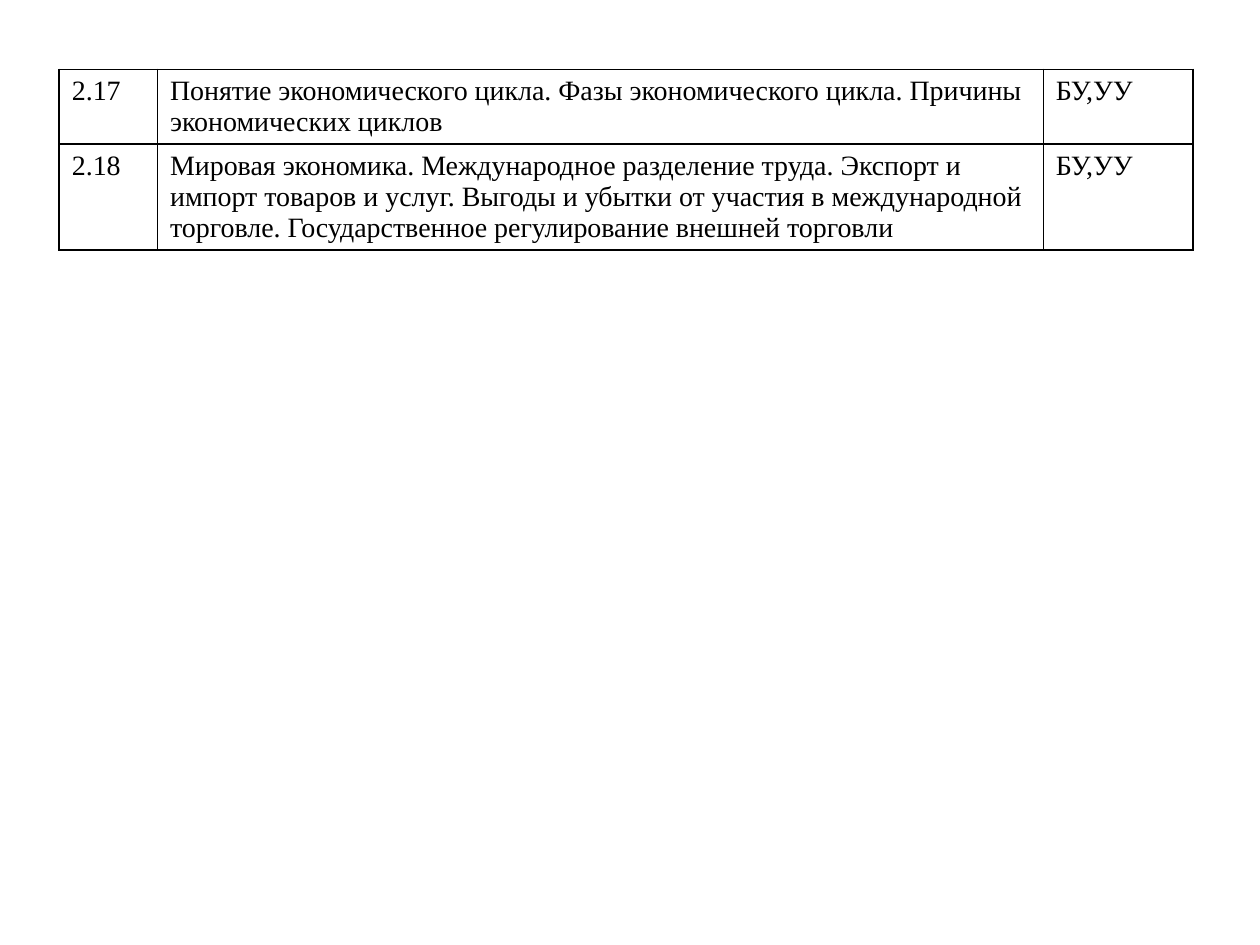
import pptx
import pptx.dml.color
import pptx.oxml
import pptx.oxml.ns
import pptx.util
from pptx.util import Inches

BLACK = pptx.dml.color.RGBColor(0x00, 0x00, 0x00)
WHITE = pptx.dml.color.RGBColor(0xFF, 0xFF, 0xFF)

COLUMN_WIDTHS = [0.78, 7.03, 1.19]
ROW_HEIGHT = 0.41
TOPICS = [
    ("2.17",
     "Понятие экономического цикла. Фазы экономического цикла. "
     "Причины экономических циклов",
     "БУ,УУ"),
    ("2.18",
     "Мировая экономика. Международное разделение труда. Экспорт и импорт "
     "товаров и услуг. Выгоды и убытки от участия в международной торговле. "
     "Государственное регулирование внешней торговли",
     "БУ,УУ"),
]


def add_borders(cell, color, width):
    """Draw a solid line on all four sides; call before setting the fill."""
    properties = cell._tc.get_or_add_tcPr()
    for side in ("lnL", "lnR", "lnT", "lnB"):
        properties.append(pptx.oxml.parse_xml(
            f'<a:{side} {pptx.oxml.ns.nsdecls("a")} w="{int(width)}">'
            f'<a:solidFill><a:srgbClr val="{color}"/></a:solidFill></a:{side}>'
        ))


presentation = pptx.Presentation()
presentation.slide_width = Inches(10)
presentation.slide_height = Inches(7.5)
slide = presentation.slides.add_slide(presentation.slide_layouts[6])

topic_table = slide.shapes.add_table(
    len(TOPICS), len(COLUMN_WIDTHS),
    Inches(0.47), Inches(0.55), Inches(9), Inches(1.53),
).table
topic_table.first_row = False
topic_table.horz_banding = False

for column, width in zip(topic_table.columns, COLUMN_WIDTHS):
    column.width = Inches(width)

for row, topic in zip(topic_table.rows, TOPICS):
    row.height = Inches(ROW_HEIGHT)
    for cell, wording in zip(row.cells, topic):
        add_borders(cell, BLACK, pptx.util.Pt(1))
        cell.fill.solid()
        cell.fill.fore_color.rgb = WHITE
        cell.text = wording
        font = cell.text_frame.paragraphs[0].font
        font.name = "Times New Roman"
        font.size = pptx.util.Pt(16)
        font.color.rgb = BLACK

presentation.save("out.pptx")
